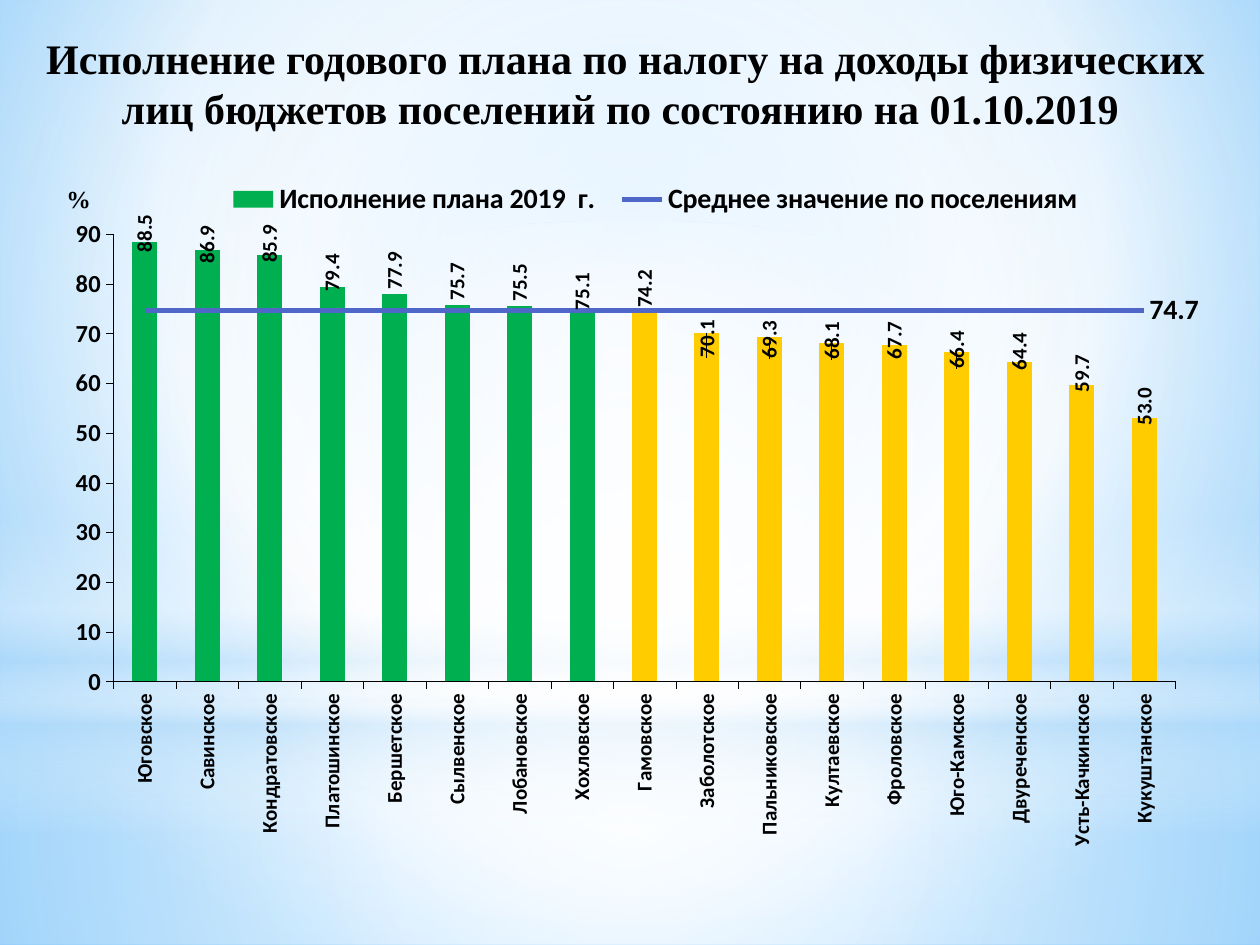
from lxml import etree
from pptx import Presentation
from pptx.chart.data import CategoryChartData
from pptx.dml.color import RGBColor
from pptx.enum.chart import XL_CHART_TYPE as ChartType, XL_LABEL_POSITION as LabelPos
from pptx.enum.chart import XL_LEGEND_POSITION as LegendPos, XL_TICK_LABEL_POSITION as TickLabelPos
from pptx.enum.chart import XL_MARKER_STYLE as Marker, XL_TICK_MARK as Tick
from pptx.enum.shapes import MSO_SHAPE as Shape
from pptx.enum.text import MSO_ANCHOR as Anchor, MSO_AUTO_SIZE as AutoSize, PP_ALIGN as Align
from pptx.oxml import parse_xml
from pptx.oxml.ns import nsdecls, qn
from pptx.util import Pt

PX = 914400 / 126
COLORS = {"text": "000000", "above": "00B050", "below": "FFCC00", "average": "4E67C8",
          "white": "FFFFFF", "haze": "B4DCFA", "sky": "9ED5FF", "deep": "5BB9FF"}
RGB = {name: RGBColor.from_string(value) for name, value in COLORS.items()}


def set_gradient(grad, stops, center=None):
    """Stops are (position, colour, opacity) in percent; no center means top to bottom."""
    for child in list(grad):
        grad.remove(child)
    gs_list = etree.SubElement(grad, qn("a:gsLst"))
    for pos, color, opacity in stops:
        gs = etree.SubElement(gs_list, qn("a:gs"), pos=str(pos * 1000))
        clr = etree.SubElement(gs, qn("a:srgbClr"), val=COLORS[color])
        etree.SubElement(clr, qn("a:alpha"), val=str(opacity * 1000))
    if center:
        path = etree.SubElement(grad, qn("a:path"), path="circle")
        sides = {side: str(v * 1000) for side, v in zip("ltrb", center)}
        etree.SubElement(path, qn("a:fillToRect"), **sides)
    else:
        etree.SubElement(grad, qn("a:lin"), ang="5400000", scaled="0")


def set_font(font, size, name="Calibri"):
    for attr, value in {"size": Pt(size), "name": name, "bold": True}.items():
        setattr(font, attr, value)
    font.color.rgb = RGB["text"]


prs = Presentation()
prs.slide_width, prs.slide_height = round(1260 * PX), round(945 * PX)
s = prs.slides.add_slide(prs.slide_layouts[5])

# Background
s.background.fill.gradient()
set_gradient(s._element.xpath(".//p:bgPr/a:gradFill")[0],
             [(0, "sky", 100), (60, "white", 100), (100, "deep", 100)], (20, 10, 20, 60))
middle = (50, 50, 50, 50)
glows = [
    (Shape.RECTANGLE, 703, 242, [(0, "white", 91), (37, "white", 76), (100, "haze", 79)], middle),
    (Shape.RECTANGLE, 0, 703, [(0, "white", 89), (48, "white", 62), (100, "haze", 79)], middle),
    (Shape.RECTANGLE, 519, 315, [(0, "white", 0), (29, "white", 30), (45, "haze", 40),
                                 (55, "white", 26), (65, "haze", 60), (100, "white", 0)], None),
    (Shape.OVAL, 221, 703, [(0, "white", 100), (56, "white", 0)], middle),
]
for kind, top, height, stops, center in glows:
    sp = s.shapes.add_shape(kind, 0, round(top * PX), prs.slide_width, round(height * PX))
    sp.shadow.inherit = False
    sp.line.fill.background()
    sp.fill.gradient()
    set_gradient(sp._element.xpath("./p:spPr/a:gradFill")[0], stops, center)

# Title, brought in front of the background shapes
title = s.shapes.title
s.shapes._spTree.append(title._element)
title.left, title.top, title.width, title.height = (round(v * PX) for v in (25, 26, 1201, 68))
tf = title.text_frame
tf.word_wrap, tf.auto_size, tf.vertical_anchor = True, AutoSize.NONE, Anchor.TOP
p = tf.paragraphs[0]
p.alignment = Align.CENTER
r = p.add_run()
r.text = "Исполнение годового плана по налогу на доходы физических лиц бюджетов поселений по состоянию на 01.10.2019 "
set_font(r.font, 24, "Times New Roman")

# Chart
results = {
    "Юговское": 88.5, "Савинское": 86.9, "Кондратовское": 85.9, "Платошинское": 79.4,
    "Бершетское": 77.9, "Сылвенское": 75.7, "Лобановское": 75.5, "Хохловское": 75.1,
    "Гамовское": 74.2, "Заболотское": 70.1, "Пальниковское": 69.3, "Култаевское": 68.1,
    "Фроловское": 67.7, "Юго-Камское": 66.4, "Двуреченское": 64.4, "Усть-Качкинское": 59.7,
    "Кукуштанское": 53.0,
}
average = 74.7
data = CategoryChartData(number_format="0.0")
data.categories = list(results)
data.add_series("Исполнение плана 2019  г. ", list(results.values()))
data.add_series("Среднее значение по поселениям", [average] * len(results))
chart_w, chart_h = 1221, 763
chart = s.shapes.add_chart(ChartType.COLUMN_CLUSTERED, round(39 * PX), round(165 * PX),
                           round(chart_w * PX), round(chart_h * PX), data).chart
set_font(chart.font, 18)
chart.has_title = False

# The average becomes a line on the same axes
bar_chart = chart._chartSpace.xpath(".//c:barChart")[0]
line_chart = parse_xml(f'<c:lineChart {nsdecls("c")}><c:grouping val="standard"/>'
                       '<c:varyColors val="0"/><c:marker val="1"/></c:lineChart>')
line_ser = bar_chart.findall(qn("c:ser"))[1]
for tag in line_ser.findall(qn("c:invertIfNegative")):
    line_ser.remove(tag)
line_chart.insert(2, line_ser)
for ax in bar_chart.findall(qn("c:axId")):
    etree.SubElement(line_chart, qn("c:axId"), val=ax.get("val"))
bar_chart.addnext(line_chart)

bars, line = chart.plots
bars.gap_width, bars.vary_by_categories = 150, False
plan = bars.series[0]
plan.format.fill.solid()
plan.format.fill.fore_color.rgb = RGB["above"]
for i, value in enumerate(results.values()):
    if value < average:
        fill = plan.points[i].format.fill
        fill.solid()
        fill.fore_color.rgb = RGB["below"]

labels = plan.data_labels
for attr, value in {"show_value": True, "number_format": "#,##0.0",
                    "number_format_is_linked": False, "position": LabelPos.OUTSIDE_END}.items():
    setattr(labels, attr, value)
set_font(labels.font, 12)
label_drops = {0: 15, 1: 18, 2: 13, 3: 10, 7: 7, 9: 29, 10: 26, 11: 21, 12: 19,
               13: 22, 14: 14, 15: 12, 16: 12}
for i, drop in label_drops.items():
    label = plan.points[i].data_label
    set_font(label.font, 12)
    label.position = LabelPos.OUTSIDE_END
    d = plan._element.xpath(f"./c:dLbls/c:dLbl[c:idx/@val='{i}']")[0]
    d.insert(1, parse_xml(f'<c:layout {nsdecls("c")}><c:manualLayout><c:x val="0"/>'
                          f'<c:y val="{drop / chart_h:.3f}"/></c:manualLayout></c:layout>'))
    d.insert(2, parse_xml(f'<c:numFmt {nsdecls("c")} formatCode="#,##0.0" sourceLinked="0"/>'))
for body in plan._element.xpath("./c:dLbls//a:bodyPr"):
    body.set("rot", "-5400000")
    body.set("vert", "horz")

mean = line.series[0]
mean.smooth = False
mean.marker.style = Marker.NONE
mean.format.line.color.rgb = RGB["average"]
mean.format.line.width = Pt(2.75)
label = mean.points[len(results) - 1].data_label
set_font(label.font, 16)
label.position = LabelPos.RIGHT
for tag in mean._element.xpath("./c:dLbls/c:showVal"):
    tag.set("val", "0")

# Axes
cat_axis, val_axis = chart.category_axis, chart.value_axis
for axis, size in ((cat_axis, 12), (val_axis, 14)):
    axis.has_major_gridlines = False
    axis.major_tick_mark, axis.minor_tick_mark = Tick.OUTSIDE, Tick.NONE
    axis.format.line.color.rgb = RGB["text"]
    axis.format.line.width = Pt(0.25)
    set_font(axis.tick_labels.font, size)
cat_axis.tick_label_position = TickLabelPos.LOW
cat_axis._element.xpath("./c:txPr/a:bodyPr")[0].set("rot", "-5400000")
val_axis.minimum_scale, val_axis.maximum_scale, val_axis.major_unit = 0, 90, 10
val_axis.tick_labels.number_format = "0"
val_axis.tick_labels.number_format_is_linked = False

# Legend and plot area positions
chart.has_legend = True
legend = chart.legend
legend.position, legend.include_in_layout = LegendPos.BOTTOM, False
set_font(legend.font, 16)
plot_area = bar_chart.getparent()
for parent, index, target, box in ((plot_area, 0, '<c:layoutTarget val="inner"/>', (0.061, 0.091, 0.87, 0.586)),
                                   (legend._element, 1, "", (0.15, 0.02, 0.71, 0.05))):
    for old in parent.findall(qn("c:layout")):
        parent.remove(old)
    size = "".join(f'<c:{k} val="{v}"/>' for k, v in zip("xywh", box))
    parent.insert(index, parse_xml(
        f'<c:layout {nsdecls("c")}><c:manualLayout>{target}<c:xMode val="edge"/>'
        f'<c:yMode val="edge"/>{size}</c:manualLayout></c:layout>'))

# Unit label
tb = s.shapes.add_textbox(*(round(v * PX) for v in (54, 178, 69, 43)))
tf = tb.text_frame
tf.word_wrap, tf.auto_size = True, AutoSize.SHAPE_TO_FIT_TEXT
r = tf.paragraphs[0].add_run()
r.text = "%"
set_font(r.font, 14, "Times New Roman")

prs.save("out.pptx")
